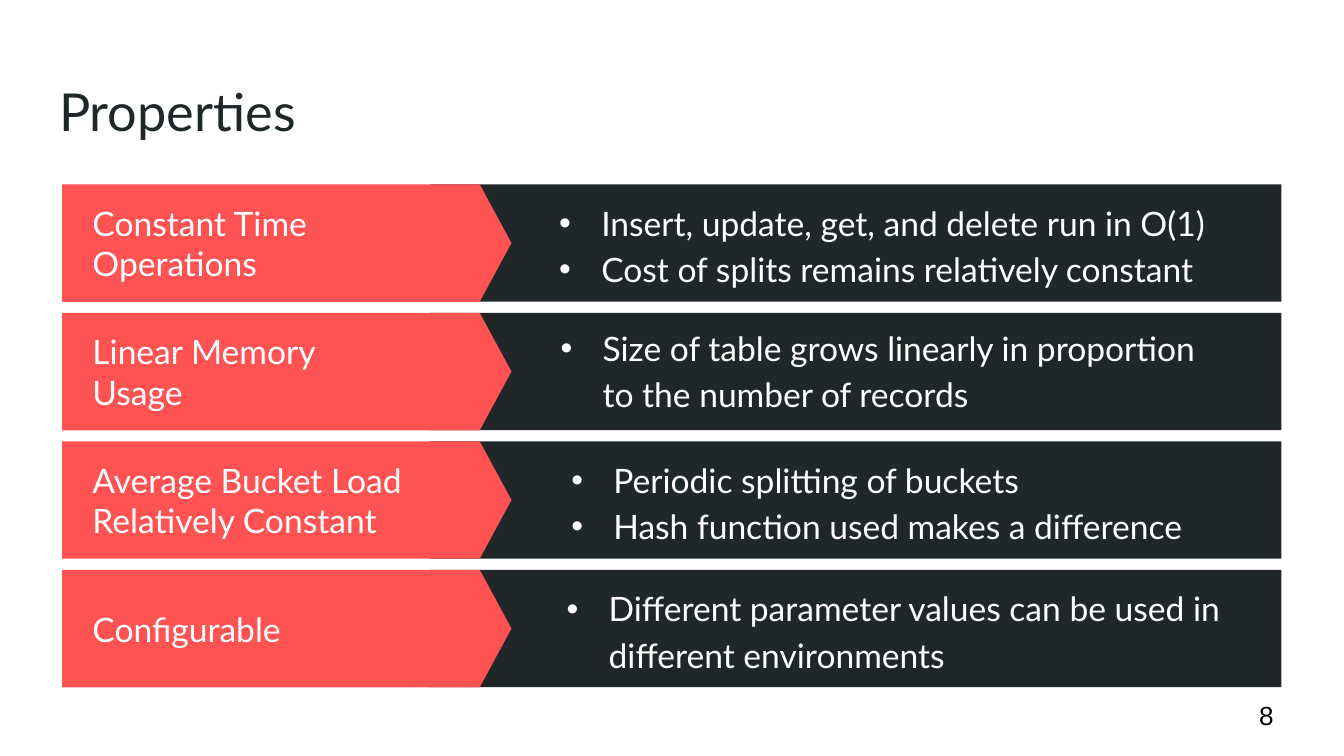
import dataclasses
import typing

import lxml.etree
import pptx
import pptx.dml.color
import pptx.enum.shapes
import pptx.enum.text
import pptx.oxml.ns
import pptx.util

Pt = pptx.util.Pt
Color = pptx.dml.color.RGBColor
Shape = pptx.enum.shapes.MSO_SHAPE
Anchor = pptx.enum.text.MSO_ANCHOR
Align = pptx.enum.text.PP_ALIGN


@dataclasses.dataclass(frozen=True)
class Theme:
    dark: Color = Color(0x20, 0x27, 0x29)
    red: Color = Color(0xFF, 0x52, 0x52)
    white: Color = Color(0xFF, 0xFF, 0xFF)
    black: Color = Color(0, 0, 0)
    face: str = "Lato"
    plain: str = "Arial"
    title: int = 28
    body: int = 18
    number: int = 14
    inset: float = 7.2


@dataclasses.dataclass(frozen=True)
class Box:
    left: float
    top: float
    width: float
    height: float

    def place(self) -> tuple:
        return Pt(self.left), Pt(self.top), Pt(self.width), Pt(self.height)


@dataclasses.dataclass(frozen=True)
class Row:
    label: str
    points: tuple[str, ...]
    left: float
    indent: float = 58.5
    shift: float = 0


THEME = Theme()
TOP, STEP, HEIGHT = 98.75, 68.85, 62.9
HANG = 22.5
ROWS = (
    Row("Constant Time Operations",
        ("Insert, update, get, and delete run in O(1)",
         "Cost of splits remains relatively constant"), 274.5, 40.5),
    Row("Linear Memory\vUsage",
        ("Size of table grows linearly in proportion to the number of records",),
        257.25, shift=-2),
    Row("Average Bucket Load Relatively Constant",
        ("Periodic splitting of buckets",
         "Hash function used makes a difference"), 263),
    Row("Configurable",
        ("Different parameter values can be used in different environments",),
        260.5),
)


def block(slide: typing.Any, kind: Shape, box: Box, color: Color) -> typing.Any:
    shape = slide.shapes.add_shape(kind, *box.place())
    shape.shadow.inherit = False
    shape.fill.solid()
    shape.fill.fore_color.rgb = color
    shape.line.fill.background()
    return shape


def write(shape: typing.Any, lines: tuple[str, ...], size: int, color: Color,
          face: str = THEME.face, anchor: Anchor = Anchor.MIDDLE) -> list:
    frame = shape.text_frame
    frame.word_wrap = True
    frame.auto_size = pptx.enum.text.MSO_AUTO_SIZE.NONE
    frame.vertical_anchor = anchor
    frame.margin_left = frame.margin_right = Pt(THEME.inset)
    frame.margin_top = frame.margin_bottom = Pt(THEME.inset)
    for index, line in enumerate(lines):
        para = frame.add_paragraph() if index else frame.paragraphs[0]
        para.text = line
        para.alignment = Align.LEFT
        para.font.name = face
        para.font.size = Pt(size)
        para.font.color.rgb = color
    return list(frame.paragraphs)


def bullet(para: typing.Any, indent: float) -> None:
    para.line_spacing = 1.15
    props = para._p.get_or_add_pPr()
    props.set("marL", str(Pt(indent)))
    props.set("indent", str(-Pt(HANG)))
    qn = pptx.oxml.ns.qn
    font = lxml.etree.Element(qn("a:buFont"), typeface=THEME.plain)
    mark = lxml.etree.Element(qn("a:buChar"), char="•")
    start = props.find(qn("a:defRPr"))
    start.addprevious(font)
    start.addprevious(mark)


def draw(slide: typing.Any, row: Row, top: float) -> None:
    block(slide, Shape.RECTANGLE, Box(230.5, top, 456, HEIGHT), THEME.dark)
    arrow = block(slide, Shape.PENTAGON, Box(33.25, top, 240.75, HEIGHT), THEME.red)
    arrow.adjustments[0] = 0.27
    label = slide.shapes.add_textbox(*Box(42.5, top, 191, HEIGHT).place())
    write(label, (row.label,), THEME.body, THEME.white)
    detail = slide.shapes.add_textbox(
        *Box(row.left, top + row.shift, 402.5, HEIGHT).place())
    for para in write(detail, row.points, THEME.body, THEME.white):
        bullet(para, row.indent)


def main() -> None:
    deck = pptx.Presentation()
    deck.slide_width, deck.slide_height = Pt(720), Pt(405)
    slide = deck.slides.add_slide(deck.slide_layouts[5])
    title = slide.shapes.title
    title.left, title.top, title.width, title.height = Box(24.5, 35, 671, 45).place()
    write(title, ("Properties",), THEME.title, THEME.dark, anchor=Anchor.TOP)
    for index, row in enumerate(ROWS):
        draw(slide, row, TOP + index * STEP)
    number = slide.shapes.add_textbox(*Box(667.5, 367.5, 43, 31).place())
    write(number, ("8",), THEME.number, THEME.black, THEME.plain)
    deck.save("out.pptx")


if __name__ == "__main__":
    main()
